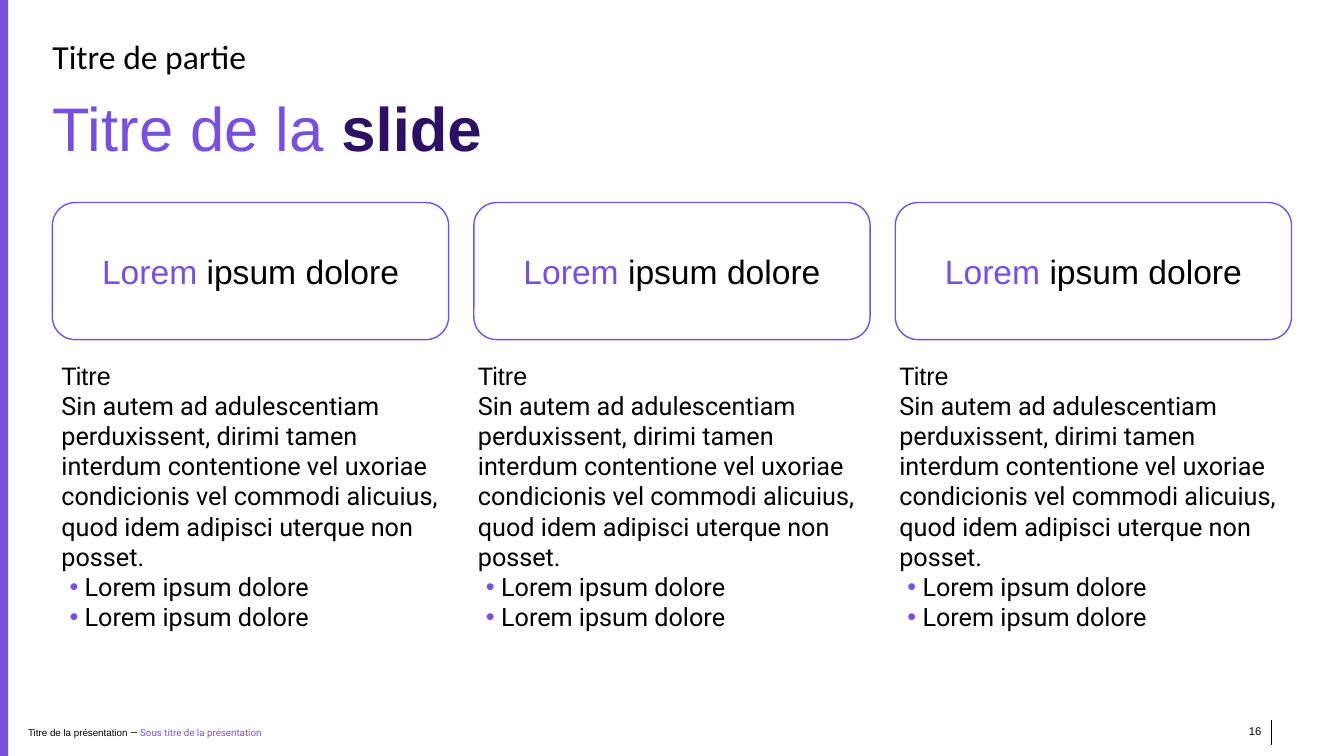
from dataclasses import dataclass

from lxml.etree import SubElement
from pptx import Presentation
from pptx.dml.color import RGBColor
from pptx.enum.shapes import MSO_CONNECTOR, MSO_SHAPE
from pptx.enum.text import MSO_ANCHOR as Anchor, MSO_AUTO_SIZE as AutoSize, PP_ALIGN as Align
from pptx.oxml.ns import qn
from pptx.util import Inches, Pt


@dataclass(frozen=True)
class Theme:
    violet: str = "7850DC"
    indigo: str = "2D0F64"
    black: str = "000000"
    sans: str = "Arial"
    body: str = "Roboto"
    section: str = "Calibri"
    title_size: int = 44
    heading_size: int = 24
    body_size: int = 18
    number_size: int = 8
    footer_size: int = 7


THEME = Theme()
CARD_LEFT, CARD_STEP, CARD_WIDTH = 0.52, 4.18, 3.93
TEXT_INSETS = (0.09, 0.04, 0.04)
BODY = (
    "Sin autem ad adulescentiam perduxissent, dirimi tamen interdum contentione "
    "vel uxoriae condicionis vel commodi alicuius, quod idem adipisci uterque non posset."
)
BULLETS = ("Lorem ipsum dolore", "Lorem ipsum dolore")


def colour(value):
    return RGBColor.from_string(value)


def add_span(para, text, size, font=THEME.sans, fill=THEME.black, bold=False):
    span = para.add_run()
    span.text = text
    span.font.size = Pt(size)
    span.font.name = font
    span.font.bold = bold
    span.font.color.rgb = colour(fill)


def prepare_frame(shape, anchor=Anchor.TOP, left_margin=0.0, grow=False):
    frame = shape.text_frame
    frame.word_wrap = True
    frame.auto_size = AutoSize.SHAPE_TO_FIT_TEXT if grow else AutoSize.NONE
    frame.vertical_anchor = anchor
    frame.margin_left = Inches(left_margin)
    frame.margin_top = frame.margin_right = frame.margin_bottom = 0
    return frame


def add_text_box(page, box, **options):
    return prepare_frame(page.shapes.add_textbox(*map(Inches, box)), **options)


def add_bullet(para):
    properties = para._p.get_or_add_pPr()
    properties.set("marL", str(Inches(0.23)))
    properties.set("indent", str(Inches(-0.15)))
    bullet_colour = SubElement(properties, qn("a:buClr"))
    SubElement(bullet_colour, qn("a:srgbClr"), val=THEME.violet)
    SubElement(properties, qn("a:buFont"), typeface=THEME.sans)
    SubElement(properties, qn("a:buChar"), char="•")


# Violet band on the left edge
def add_side_band(page, box):
    band = page.shapes.add_shape(MSO_SHAPE.RECTANGLE, *map(Inches, box))
    band.shadow.inherit = False
    band.fill.solid()
    band.fill.fore_color.rgb = colour(THEME.violet)
    band.line.fill.background()


# Section name above the slide title
def add_header(page, box):
    left, top, width, height = box
    section = add_text_box(page, (left, top, 6.14, 0.36), grow=True).paragraphs[0]
    title = add_text_box(page, (left, top + 0.58, width, height - 0.58), grow=True).paragraphs[0]
    section.line_spacing = title.line_spacing = 0.9
    add_span(section, "Titre de partie", THEME.heading_size, THEME.section)
    add_span(title, "Titre de la ", THEME.title_size, fill=THEME.violet)
    add_span(title, "slide", THEME.title_size, fill=THEME.indigo, bold=True)


# Outlined card with a two-colour heading
def add_card(page, box):
    card = page.shapes.add_shape(MSO_SHAPE.ROUNDED_RECTANGLE, *map(Inches, box))
    card.shadow.inherit = False
    card.fill.background()
    card.line.color.rgb = colour(THEME.violet)
    card.line.width = Pt(1)
    para = prepare_frame(card, anchor=Anchor.MIDDLE).paragraphs[0]
    para.alignment = Align.CENTER
    add_span(para, "Lorem ", THEME.heading_size, fill=THEME.violet)
    add_span(para, "ipsum dolore", THEME.heading_size)


# Heading, body text and bullets below a card
def add_column_text(page, box):
    frame = add_text_box(page, box, grow=True)
    add_span(frame.paragraphs[0], "Titre", THEME.body_size)
    add_span(frame.add_paragraph(), BODY, THEME.body_size, THEME.body)
    for item in BULLETS:
        para = frame.add_paragraph()
        add_bullet(para)
        add_span(para, item, THEME.body_size, THEME.body)


# Presentation title, page number and its rule
def add_footer(page, box):
    left, top, width, height = box
    para = add_text_box(page, (left, top, 4.5, height),
                        anchor=Anchor.MIDDLE, left_margin=0.2).paragraphs[0]
    add_span(para, "Titre de la présentation ", THEME.footer_size)
    add_span(para, "— ", THEME.footer_size, THEME.body)
    add_span(para, "Sous titre de la présentation", THEME.footer_size, THEME.body, THEME.violet)

    right = left + width
    number = add_text_box(page, (right - 0.55, top + 0.05, 0.55, 0.2), anchor=Anchor.MIDDLE)
    number.margin_right = Inches(0.1)
    number.paragraphs[0].alignment = Align.RIGHT
    add_span(number.paragraphs[0], "16", THEME.number_size)

    rule = page.shapes.add_connector(
        MSO_CONNECTOR.STRAIGHT,
        *map(Inches, (right, top + 0.04, right, top + 0.29)))
    rule.line.color.rgb = colour(THEME.black)
    rule.line.width = Pt(0.5)
    SubElement(rule._element.spPr, qn("a:effectLst"))


def main():
    deck = Presentation()
    deck.slide_width, deck.slide_height = Inches(13.33), Inches(7.5)
    page = deck.slides.add_slide(deck.slide_layouts[6])

    add_side_band(page, (0, 0, 0.08, 7.5))
    add_header(page, (CARD_LEFT, 0.4, 10.7, 1.25))
    for column, inset in enumerate(TEXT_INSETS):
        left = CARD_LEFT + column * CARD_STEP
        add_card(page, (left, 2.01, CARD_WIDTH, 1.36))
        add_column_text(page, (left + inset, 3.57, 3.84, 3.03))
    add_footer(page, (0.08, 7.1, 12.53, 0.33))

    deck.save("out.pptx")


if __name__ == "__main__":
    main()
